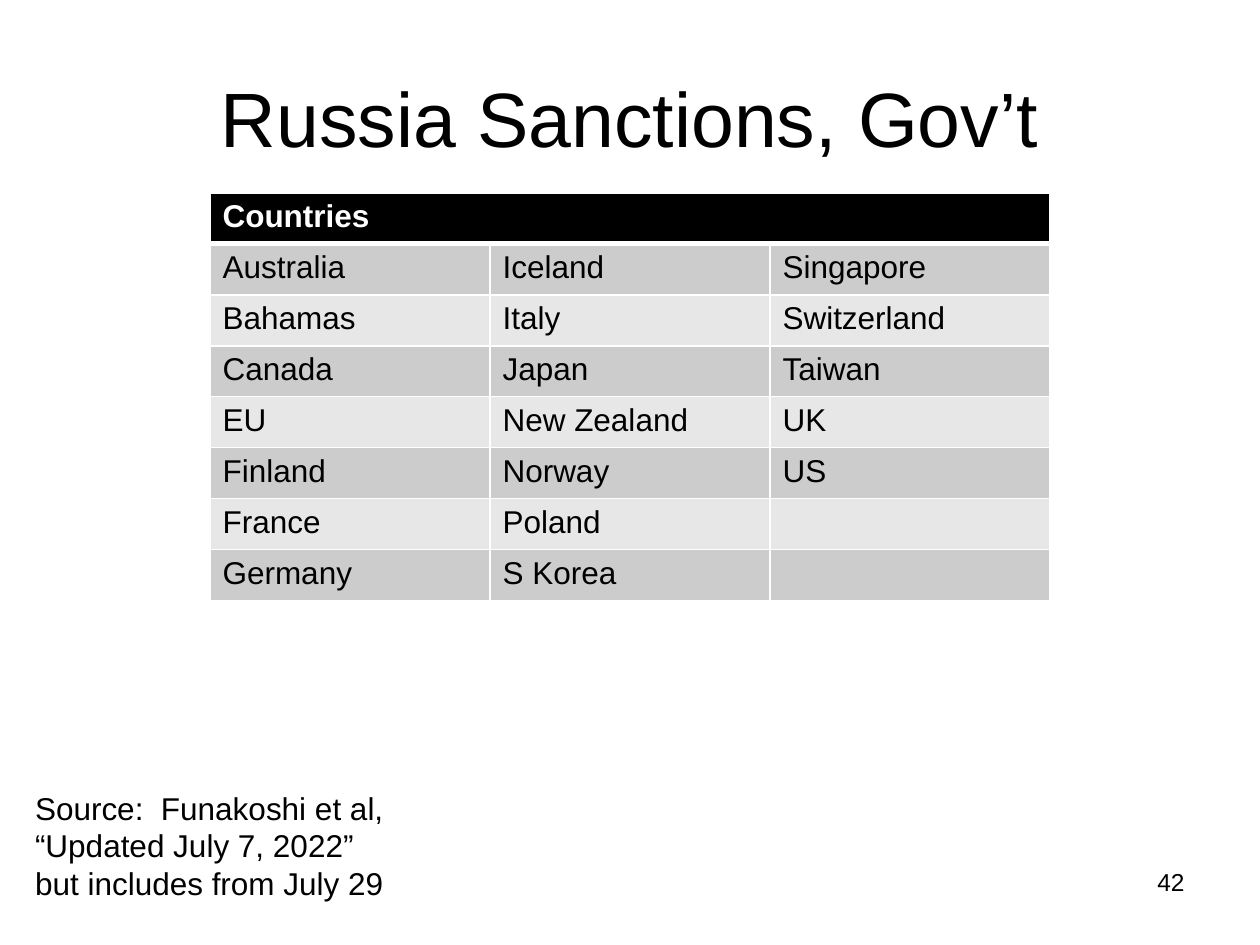
from lxml import etree
from pptx import Presentation
from pptx import util as u
from pptx.dml.color import RGBColor
from pptx.enum import text
from pptx.oxml.ns import qn

COLOURS = {"ink": "000000", "paper": "FFFFFF", "dark": "CCCCCC", "light": "E7E7E7"}
WIDTH, HEIGHT = u.Inches(10), u.Inches(7.5)
COUNTRIES = [
    ["Australia", "Bahamas", "Canada", "EU", "Finland", "France", "Germany"],
    ["Iceland", "Italy", "Japan", "New Zealand", "Norway", "Poland", "S Korea"],
    ["Singapore", "Switzerland", "Taiwan", "UK", "US", "", ""],
]


def colour(name):
    """Return the named colour."""
    return RGBColor.from_string(COLOURS[name])


def style(paragraph, size, ink="ink", bold=False, align=text.PP_ALIGN.LEFT):
    """Set the font and alignment of a paragraph."""
    paragraph.alignment = align
    font = paragraph.font
    font.name, font.size, font.bold = "Arial", u.Pt(size), bold
    font.color.rgb = colour(ink)


def add_words(slide, words, box, size, align=text.PP_ALIGN.LEFT,
              anchor=text.MSO_ANCHOR.TOP):
    """Add wrapped text in a box given in inches."""
    frame = slide.shapes.add_textbox(*map(u.Inches, box)).text_frame
    frame.word_wrap = True
    frame.vertical_anchor = anchor
    frame.text = words
    style(frame.paragraphs[0], size, align=align)


def set_borders(cell, bottom=1):
    """Draw white borders round a cell, with a bottom width in points."""
    properties = cell._tc.get_or_add_tcPr()
    for position, (side, points) in enumerate(
            [("lnL", 1), ("lnR", 1), ("lnT", 1), ("lnB", bottom)]):
        line = etree.Element(qn(f"a:{side}"), w=str(u.Pt(points)))
        fill = etree.SubElement(line, qn("a:solidFill"))
        etree.SubElement(fill, qn("a:srgbClr"), val=COLOURS["paper"])
        properties.insert(position, line)


def fill_cell(cell, words, fill, ink="ink", bold=False, bottom=1):
    """Write and colour one table cell."""
    cell.text = words
    style(cell.text_frame.paragraphs[0], 18, ink, bold)
    cell.fill.solid()
    cell.fill.fore_color.rgb = colour(fill)
    set_borders(cell, bottom)


def add_countries(slide):
    """Add the banded table of countries below a merged heading."""
    columns, rows = len(COUNTRIES), len(COUNTRIES[0]) + 1
    width, height = WIDTH * 2 // 3, u.Inches(3.24)
    table = slide.shapes.add_table(
        rows, columns, (WIDTH - width) // 2, u.Inches(1.53), width, height).table
    for column in range(columns):
        fill_cell(table.cell(0, column), "" if column else "Countries",
                  "ink", "paper", bold=True, bottom=3)
    table.cell(0, 0).merge(table.cell(0, columns - 1))
    for column, names in enumerate(COUNTRIES):
        for row, name in enumerate(names, 1):
            fill_cell(table.cell(row, column), name, "dark" if row % 2 else "light")


def main():
    """Build and save the slide."""
    deck = Presentation()
    deck.slide_width, deck.slide_height = WIDTH, HEIGHT
    slide = deck.slides.add_slide(deck.slide_layouts[6])
    add_words(slide, "42", (7.17, 6.83, 2.33, 0.52), 14, text.PP_ALIGN.RIGHT)
    add_countries(slide)
    add_words(slide, "Russia Sanctions, Gov’t", (0.5, 0.3, 9, 1.25), 44,
              text.PP_ALIGN.CENTER, text.MSO_ANCHOR.MIDDLE)
    add_words(slide, "Source:  Funakoshi et al, “Updated July 7, 2022” "
              "but includes from July 29", (0.18, 6.21, 3.06, 1.01), 18)
    deck.save("out.pptx")


if __name__ == "__main__":
    main()
